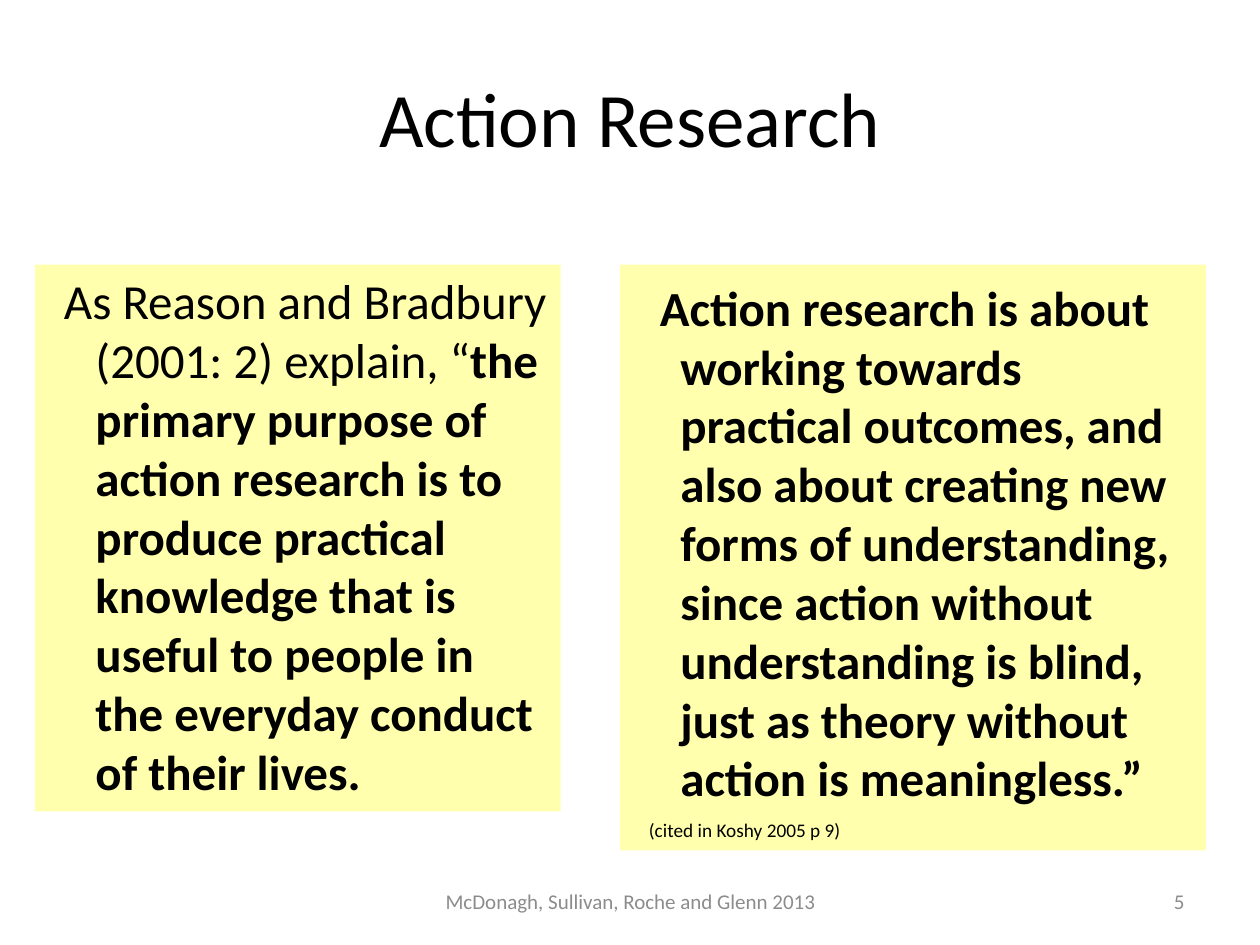
import lxml.etree
import pptx
import pptx.dml.color
import pptx.enum.shapes
import pptx.enum.text
import pptx.oxml.ns
import pptx.util

Inches = pptx.util.Inches
Pt = pptx.util.Pt
Align = pptx.enum.text.PP_ALIGN
Anchor = pptx.enum.text.MSO_ANCHOR

COLOURS = {"text": "000000", "panel": "FFFF00", "footer": "8C8C8C"}
FONT = "Calibri"
PANEL_ALPHA = 32
QUOTE_SIZE = 28


def place(shape, box):
    """Move a shape to a box of left, top, width and height in inches."""
    shape.left, shape.top, shape.width, shape.height = map(Inches, box)


def format_frame(frame, anchor, side, end):
    """Set the wrapping, anchor and margins of a text frame."""
    frame.word_wrap = True
    frame.auto_size = pptx.enum.text.MSO_AUTO_SIZE.NONE
    frame.vertical_anchor = anchor
    frame.margin_left = frame.margin_right = Inches(side)
    frame.margin_top = frame.margin_bottom = Inches(end)


def add_span(para, text, size, colour="text", bold=False):
    """Add one formatted run to a paragraph."""
    span = para.add_run()
    span.text = text
    span.font.name = FONT
    span.font.size = Pt(size)
    span.font.bold = bold
    span.font.color.rgb = pptx.dml.color.RGBColor.from_string(COLOURS[colour])


def add_title(page, box, text):
    """Fill the title placeholder."""
    title = page.shapes.title
    place(title, box)
    format_frame(title.text_frame, Anchor.MIDDLE, 0.1, 0.1)
    para = title.text_frame.paragraphs[0]
    para.alignment = Align.CENTER
    add_span(para, text, 44)


def fill_panel(panel, box, paragraphs, end):
    """Write hanging paragraphs of (text, size, bold) on a translucent panel."""
    place(panel, box)
    panel.fill.solid()
    panel.fill.fore_color.rgb = pptx.dml.color.RGBColor.from_string(COLOURS["panel"])
    colour = panel.fill._xPr.find(".//" + pptx.oxml.ns.qn("a:srgbClr"))
    alpha = lxml.etree.SubElement(colour, pptx.oxml.ns.qn("a:alpha"))
    alpha.set("val", str(PANEL_ALPHA * 1000))
    panel.line.fill.background()
    frame = panel.text_frame
    format_frame(frame, Anchor.TOP, 0.1, end)
    for index, spans in enumerate(paragraphs):
        para = frame.add_paragraph() if index else frame.paragraphs[0]
        para.alignment = Align.LEFT
        para.space_before = Pt(6.4)
        properties = para._p.get_or_add_pPr()
        properties.set("marL", str(Inches(0.38)))
        properties.set("indent", str(Inches(-0.25)))
        lxml.etree.SubElement(properties, pptx.oxml.ns.qn("a:buNone"))
        for text, size, bold in spans:
            add_span(para, text, size, bold=bold)


def add_footer(page, box, text, alignment):
    """Add one small grey footer text."""
    footer = page.shapes.add_textbox(*map(Inches, box))
    format_frame(footer.text_frame, Anchor.MIDDLE, 0.1, 0.05)
    para = footer.text_frame.paragraphs[0]
    para.alignment = alignment
    add_span(para, text, 12, "footer")


def main():
    """Build and save the slide."""
    deck = pptx.Presentation()
    deck.slide_width, deck.slide_height = Inches(10), Inches(7.5)
    page = deck.slides.add_slide(deck.slide_layouts[1])
    add_title(page, (0.5, 0.3, 9, 1.25), "Action Research")
    outcomes = [
        [
            (" ", QUOTE_SIZE, False),
            ("Action research is about working towards practical outcomes, and also "
             "about creating new forms of understanding, since action without "
             "understanding is blind, just as theory without action is meaningless.”",
             QUOTE_SIZE, True),
        ],
        [("(cited in Koshy 2005 p 9)", 11, False)],
    ]
    fill_panel(page.placeholders[1], (4.92, 2.1, 4.65, 4.65), outcomes, 0.1)
    add_footer(page, (7.17, 6.95, 2.33, 0.4), "5", Align.RIGHT)
    add_footer(page, (3.42, 6.95, 3.17, 0.4),
               "McDonagh, Sullivan, Roche and Glenn 2013", Align.CENTER)
    purpose = [[
        ("As Reason and Bradbury (2001: 2) explain, “", QUOTE_SIZE, False),
        ("the primary purpose of action research is to produce practical knowledge "
         "that is useful to people in the everyday conduct of their lives.",
         QUOTE_SIZE, True),
    ]]
    purpose_box = (0.28, 2.1, 4.17, 4.34)
    panel = page.shapes.add_shape(
        pptx.enum.shapes.MSO_SHAPE.RECTANGLE, *map(Inches, purpose_box))
    panel.shadow.inherit = False
    fill_panel(panel, purpose_box, purpose, 0.05)
    deck.save("out.pptx")


if __name__ == "__main__":
    main()
